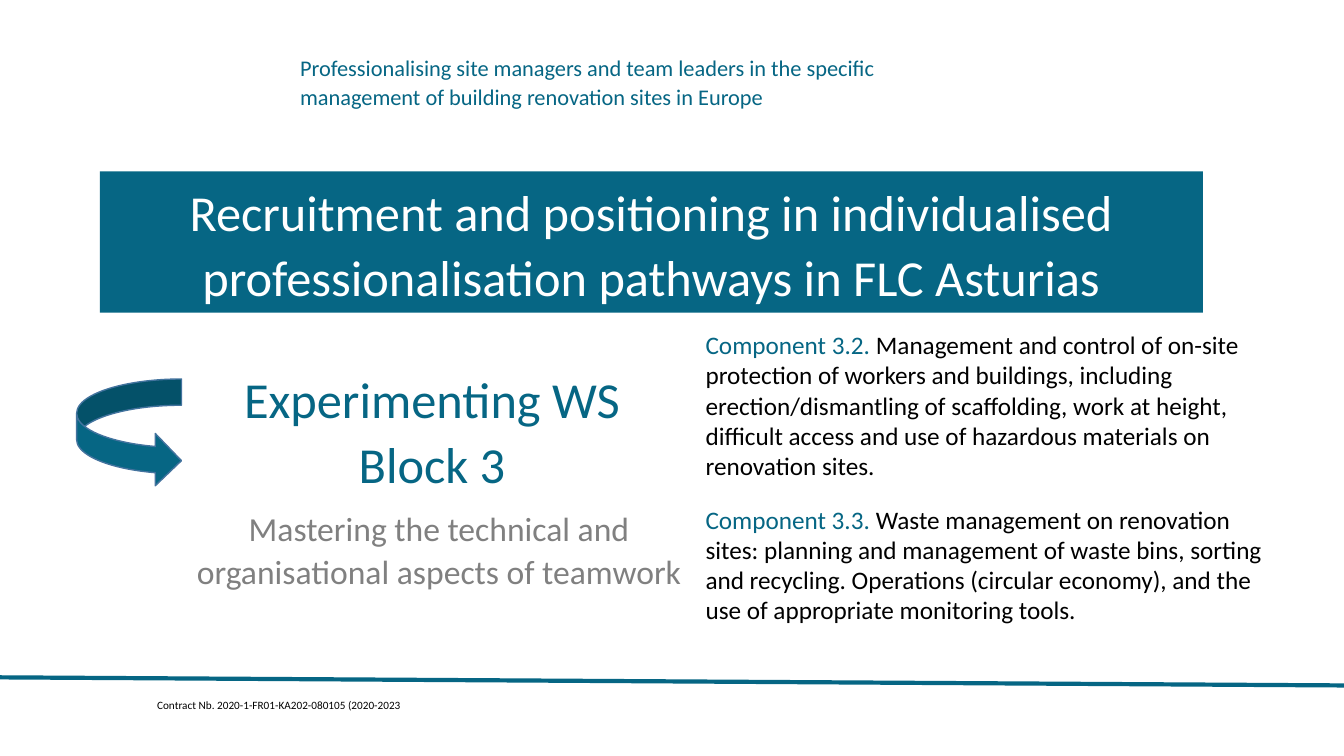
from pptx import Presentation
from pptx.dml.color import RGBColor
from pptx.enum.shapes import MSO_CONNECTOR, MSO_SHAPE
from pptx.enum.text import MSO_AUTO_SIZE, PP_ALIGN
from pptx.oxml.ns import qn
from pptx.util import Inches, Pt
from lxml.etree import SubElement

W, H = Inches(13.33), Inches(7.5)
COLORS = {"teal": "066684", "edge": "43739E", "grey": "808080",
          "black": "000000", "white": "FFFFFF"}
CENTERED = {"alignment": PP_ALIGN.CENTER, "line_spacing": 1.07}


def rgb(name):
    return RGBColor.from_string(COLORS[name])


def place(x, y, w, h):
    return [round(share * size / 100) for share, size in zip((x, y, w, h), (W, H, W, H))]


def set_all(target, values):
    for name, value in values.items():
        setattr(target, name, value)


def write(sp, runs, size, para, wrap=True):
    tf = sp.text_frame
    set_all(tf, {"word_wrap": wrap, "auto_size": MSO_AUTO_SIZE.SHAPE_TO_FIT_TEXT})
    p = tf.paragraphs[0]
    set_all(p, para)
    for text, color in runs:
        r = p.add_run()
        r.text = text
        set_all(r.font, {"name": "Calibri", "size": Pt(size)})
        r.font.color.rgb = rgb(color)


def add_text(s, box, runs, size, para, wrap=True):
    write(s.shapes.add_textbox(*place(*box)), runs, size, para, wrap)


def add_filled(s, kind, box):
    sp = s.shapes.add_shape(kind, *place(*box))
    sp.shadow.inherit = False
    sp.fill.solid()
    sp.fill.fore_color.rgb = rgb("teal")
    return sp


def add_frame(s, x, y, w, h):
    add_text(s, (x + 21.6, y + 6.27, 50.7, 8.8),
             [("Professionalising site managers and team leaders in the specific "
               "management of building renovation sites in Europe", "teal")],
             16, {"line_spacing": 1.07})
    add_text(s, (x + 10.95, y + 91.73, 19.65, 3.2),
             [("Contract Nb. 2020-1-FR01-KA202-080105 (2020-2023", "black")], 8, {}, False)
    left, top, width, drop = place(x, y + 89.6, w, 1.07)
    rule = s.shapes.add_connector(MSO_CONNECTOR.STRAIGHT, left, top, left + width, top + drop)
    rule.line.color.rgb = rgb("teal")
    rule.line.width = Pt(3)
    SubElement(rule._element.spPr, qn("a:effectLst"))


def add_banner(s, *box):
    sp = add_filled(s, MSO_SHAPE.RECTANGLE, box)
    sp.line.fill.background()
    write(sp, [("Recruitment and positioning in individualised "
                "professionalisation pathways in FLC Asturias", "white")], 36, CENTERED)


def add_block(s, x, y, w, h):
    add_text(s, (x + 8.48, y, 35.93, 18.67),
             [("Experimenting WS Block 3", "teal")], 36, CENTERED)
    add_text(s, (x + 7.8, y + 18.67, w - 7.8, h - 18.67),
             [("Mastering the technical and organisational aspects of teamwork", "grey")],
             24, CENTERED)
    arrow = add_filled(s, MSO_SHAPE.CURVED_RIGHT_ARROW, (x, y + 2.67, 7.8, 14.27))
    arrow.line.color.rgb = rgb("edge")
    arrow.line.width = Pt(1)


def add_components(s, x, y, w, h):
    items = [
        ("Component 3.2. ", 0, 42.7, 21.6,
         "Management and control of on-site protection of workers and buildings, "
         "including erection/dismantling of scaffolding, work at height, difficult "
         "access and use of hazardous materials on renovation sites."),
        ("Component 3.3. ", 23.07, w, h - 23.07,
         "Waste management on renovation sites: planning and management of waste bins, "
         "sorting and recycling. Operations (circular economy), and the use of "
         "appropriate monitoring tools."),
    ]
    for label, down, width, height, text in items:
        add_text(s, (x, y + down, width, height),
                 [(label, "teal"), (text, "black")], 18, {})


def main():
    prs = Presentation()
    set_all(prs, {"slide_width": W, "slide_height": H})
    s = prs.slides.add_slide(prs.slide_layouts[6])
    add_frame(s, 0, 0, 100, 100)
    add_banner(s, 7.43, 22.67, 82.07, 18.67)
    add_block(s, 5.7, 47.47, 46.13, 31.6)
    add_components(s, 51.76, 42.93, 44.26, 40.53)
    prs.save("out.pptx")


if __name__ == "__main__":
    main()
